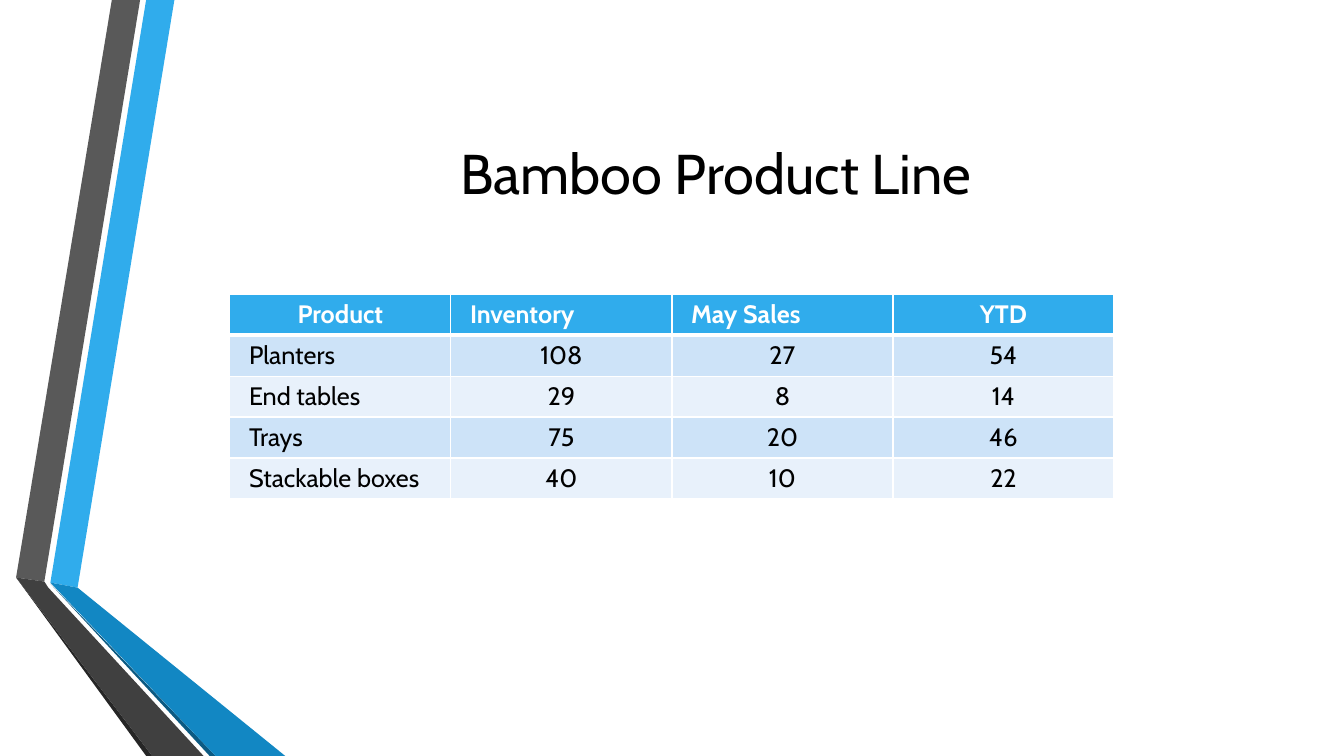
from lxml.etree import SubElement
from pptx import Presentation
from pptx.dml.color import RGBColor
from pptx.enum.text import MSO_ANCHOR as Anchor, PP_ALIGN as Align
from pptx.oxml.ns import qn
from pptx.util import Inches, Pt

COLORS = {
    "white": "FFFFFF",
    "black": "000000",
    "blue": "30ACEC",
    "mid_blue": "1287C3",
    "deep_blue": "0C5A82",
    "gray": "595959",
    "dark_gray": "404040",
    "deep_gray": "262626",
    "band_dark": "CDE3F8",
    "band_light": "E8F1FB",
}
FONT = "Cabin"
RIBBONS = [
    ("blue", [(0.34, 5.78), (0.61, 5.83), (1.57, 0), (1.29, 0)]),
    ("gray", [(1.23, 0), (0.95, 0), (0, 5.73), (0.28, 5.77)]),
    ("deep_gray", [(0, 5.73), (1.29, 7.5), (1.35, 7.5)]),
    ("deep_blue", [(0.34, 5.79), (1.92, 7.5), (1.98, 7.5)]),
    ("mid_blue", [(0.34, 5.78), (1.98, 7.5), (2.67, 7.5), (0.61, 5.83)]),
    ("dark_gray", [(1.86, 7.5), (0.32, 5.83), (0.28, 5.77), (0, 5.73), (1.35, 7.5)]),
]
PRODUCT_ROWS = [
    ("Product", "Inventory", "May Sales", "YTD"),
    ("Planters", "108", "27", "54"),
    ("End tables", "29", "8", "14"),
    ("Trays", "75", "20", "46"),
    ("Stackable boxes", "40", "10", "22"),
]
LEFT_HEADERS = ("Inventory", "May Sales")


def rgb(name):
    return RGBColor.from_string(COLORS[name])


def write_text(frame, text, size=18, color="black", bold=False, align=Align.LEFT):
    paragraph = frame.paragraphs[0]
    paragraph.alignment = align
    run = paragraph.add_run()
    run.text = text
    run.font.name = FONT
    run.font.size = Pt(size)
    run.font.bold = bold
    run.font.color.rgb = rgb(color)


def add_ribbons(slide, left, top):
    for color, points in RIBBONS:
        corners = [(Inches(left + x), Inches(top + y)) for x, y in points]
        builder = slide.shapes.build_freeform(*corners[0])
        builder.add_line_segments(corners[1:], close=True)
        shape = builder.convert_to_shape()
        shape.shadow.inherit = False
        shape.fill.solid()
        shape.fill.fore_color.rgb = rgb(color)
        shape.line.fill.background()


def add_title(slide, left, top, width, height):
    box = slide.shapes.add_textbox(
        Inches(left), Inches(top), Inches(width), Inches(height)
    )
    frame = box.text_frame
    frame.word_wrap = True
    frame.vertical_anchor = Anchor.MIDDLE
    write_text(frame, "Bamboo Product Line", size=40, align=Align.CENTER)


def set_borders(cell, **widths):
    properties = cell._tc.get_or_add_tcPr()
    for side, width in widths.items():
        line = SubElement(properties, qn(f"a:ln{side}"), w=str(Pt(width)))
        fill = SubElement(line, qn("a:solidFill"))
        SubElement(fill, qn("a:srgbClr"), val=COLORS["white"])


def style_cell(cell, fill, bottom_border):
    set_borders(cell, L=1, R=1, T=1, B=bottom_border)
    cell.fill.solid()
    cell.fill.fore_color.rgb = rgb(fill)
    cell.vertical_anchor = Anchor.MIDDLE
    cell.margin_left = cell.margin_right = Inches(0.19)
    cell.margin_top = cell.margin_bottom = Inches(0.05)


def add_product_table(slide, left, top, width, height):
    table = slide.shapes.add_table(
        len(PRODUCT_ROWS), len(PRODUCT_ROWS[0]),
        Inches(left), Inches(top), Inches(width), Inches(height),
    ).table
    for row, values in enumerate(PRODUCT_ROWS):
        header = row == 0
        band = "band_dark" if row % 2 else "band_light"
        for column, value in enumerate(values):
            cell = table.cell(row, column)
            is_left = value in LEFT_HEADERS if header else column == 0
            border = 3 if header else 1
            style_cell(cell, "blue" if header else band, border)
            if row == 1:
                cell._tc.tcPr.find(qn("a:lnT")).set("w", str(Pt(3)))
            write_text(
                cell.text_frame, value, bold=header,
                color="white" if header else "black",
                align=Align.LEFT if is_left else Align.CENTER,
            )


def main():
    presentation = Presentation()
    presentation.slide_width = Inches(13.33)
    presentation.slide_height = Inches(7.5)
    slide = presentation.slides.add_slide(presentation.slide_layouts[6])
    add_ribbons(slide, 0.16, 0)
    add_title(slide, 1.62, 0.75, 10.96, 1.92)
    add_product_table(slide, 2.28, 2.92, 8.77, 2.03)
    presentation.save("out.pptx")


if __name__ == "__main__":
    main()
